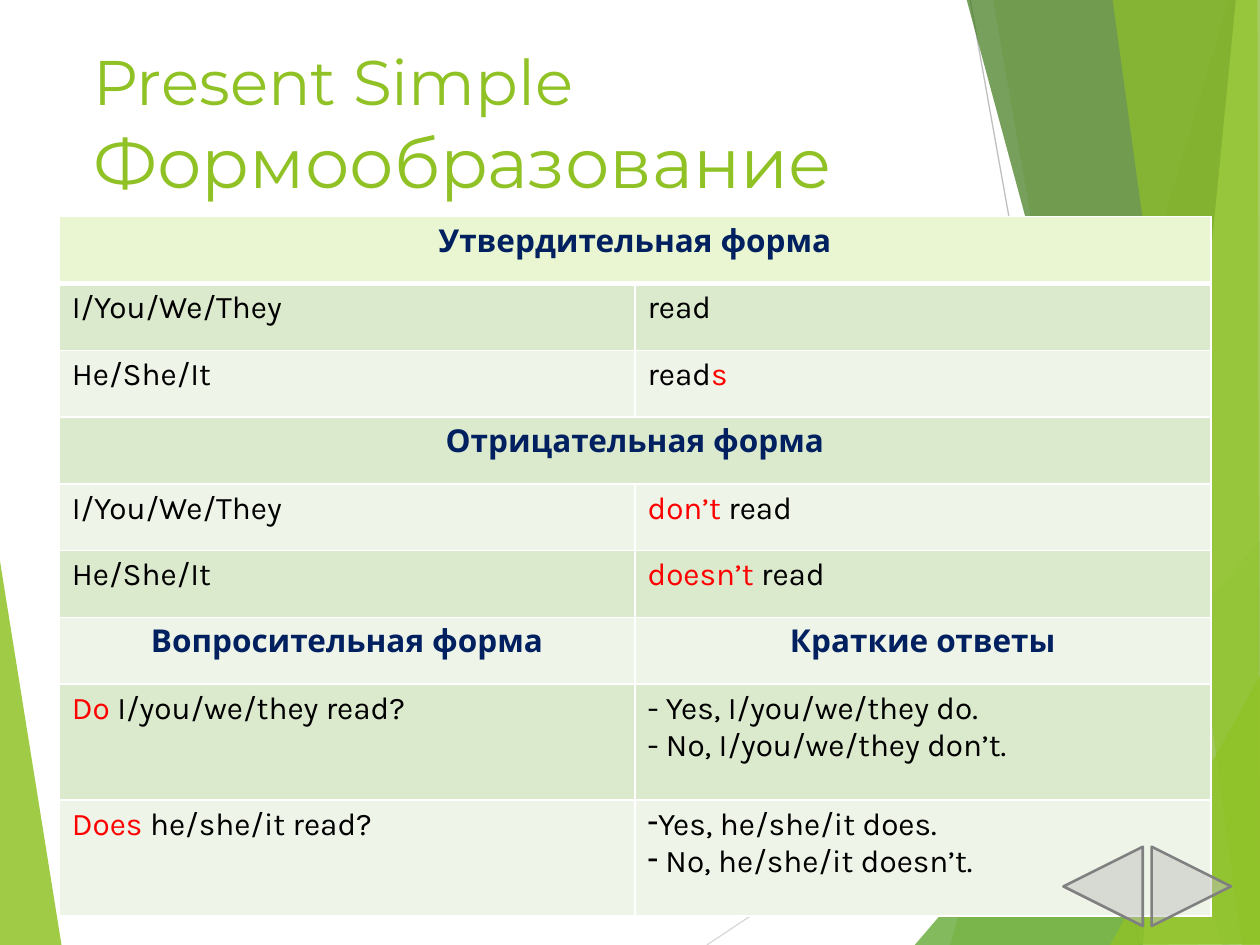
from dataclasses import dataclass
from typing import NamedTuple

from lxml.etree import SubElement
from pptx import Presentation
from pptx.dml.color import RGBColor
from pptx.enum.shapes import MSO_CONNECTOR, MSO_SHAPE
from pptx.enum.text import MSO_ANCHOR, PP_ALIGN
from pptx.oxml.ns import qn
from pptx.util import Inches, Pt

GREEN, NAVY, RED, BLACK = "90C226", "002060", "FF0000", "000000"
MINT, PALE, LIME = "DBE9CD", "EEF4E8", "EAF6D1"


class Facet(NamedTuple):
    color: str
    opacity: int
    points: list[tuple[float, float]]


class Ray(NamedTuple):
    color: str
    start: tuple[float, float]
    end: tuple[float, float]


class Words(NamedTuple):
    text: str
    color: str = BLACK


@dataclass
class Cell:
    lines: list[list[Words]]
    heading: bool = False
    bullet: str = ""


@dataclass
class Row:
    fill: str
    cells: list[Cell]
    height: float = 0.53


class Arrow(NamedTuple):
    left: float
    rotation: int


def heading(text: str) -> Cell:
    return Cell([[Words(text, NAVY)]], heading=True)


def plain(*lines: str, bullet: str = "") -> Cell:
    return Cell([[Words(line)] for line in lines], bullet=bullet)


def marked(*words: Words) -> Cell:
    return Cell([list(words)])


LEFT_FACET = Facet(GREEN, 85, [(-0.01, 4.39), (0.49, 7.51), (-0.01, 7.5)])
RAYS = [
    Ray("D9D9D9", (5.61, 7.5), (10.01, 4.57)),
    Ray("BFBFBF", (7.7, 0), (9.04, 7.5)),
]
RIGHT_FACETS = [
    Facet(GREEN, 30, [(9.75, 0), (7.54, 7.5), (10.02, 7.51), (10.01, 0.01)]),
    Facet(GREEN, 20, [(7.88, -0.01), (9.19, 7.5), (10.01, 7.5), (10.01, -0.01)]),
    Facet("54A021", 72, [(7.26, 7.5), (10, 4.29), (10.01, 7.5)]),
    Facet("3F7819", 70, [(7.67, -0.01), (9.7, 7.5), (10.01, 7.49), (10.01, -0.01)]),
    Facet("C0E474", 70, [(9.81, -0.01), (9.07, 7.5), (10.01, 7.5), (10, -0.01)]),
    Facet(GREEN, 65, [(8.83, -0.01), (9.86, 7.5), (10, 7.5), (9.98, -0.01)]),
    Facet(GREEN, 80, [(8.81, 7.5), (10.01, 5.35), (10.01, 7.49)]),
]
ROWS = [
    Row(LIME, [heading("Утвердительная форма")]),
    Row(MINT, [plain("I/You/We/They"), plain("read")]),
    Row(PALE, [plain("He/She/It"), marked(Words("read"), Words("s", RED))]),
    Row(MINT, [heading("Отрицательная форма")]),
    Row(PALE, [plain("I/You/We/They"), marked(Words("don’t", RED), Words(" read"))]),
    Row(MINT, [plain("He/She/It"), marked(Words("doesn’t", RED), Words(" read"))]),
    Row(PALE, [heading("Вопросительная форма"), heading("Краткие ответы")]),
    Row(MINT, [marked(Words("Do", RED), Words(" I/you/we/they read?")),
               plain("- Yes, I/you/we/they do.", "- No, I/you/we/they don’t.")], 0.92),
    Row(PALE, [marked(Words("Does", RED), Words(" he/she/it read?")),
               plain("Yes, he/she/it does.", " No, he/she/it doesn’t.", bullet="-")], 0.92),
]
ARROWS = [Arrow(9.14, 90), Arrow(8.44, 270)]


def rgb(color: str) -> RGBColor:
    return RGBColor.from_string(color)


def fill_translucent(shape, color: str, opacity: int) -> None:
    shape.shadow.inherit = False
    shape.fill.solid()
    shape.fill.fore_color.rgb = rgb(color)
    color_element = shape._element.spPr.find(qn("a:solidFill"))[0]
    SubElement(color_element, qn("a:alpha"), val=str(opacity * 1000))


def draw_facet(slide, facet: Facet) -> None:
    points = [(Inches(x), Inches(y)) for x, y in facet.points]
    builder = slide.shapes.build_freeform(*points[0])
    builder.add_line_segments(points[1:], close=True)
    shape = builder.convert_to_shape()
    fill_translucent(shape, facet.color, facet.opacity)
    shape.line.fill.background()


def draw_ray(slide, ray: Ray) -> None:
    ends = [Inches(value) for value in (*ray.start, *ray.end)]
    connector = slide.shapes.add_connector(MSO_CONNECTOR.STRAIGHT, *ends)
    connector.line.color.rgb = rgb(ray.color)
    connector.line.width = Pt(0.75)
    SubElement(connector._element.spPr, qn("a:effectLst"))


def write_title(slide) -> None:
    title = slide.shapes.title
    slide.shapes._spTree.append(title._element)  # in front of the facets
    title.left, title.top = Inches(0.64), Inches(0.29)
    title.width, title.height = Inches(8.11), Inches(1.44)
    title.text_frame.vertical_anchor = MSO_ANCHOR.TOP
    paragraph = title.text_frame.paragraphs[0]
    paragraph.alignment = PP_ALIGN.LEFT
    paragraph.font.name = "Montserrat"
    paragraph.font.color.rgb = rgb(GREEN)
    first = paragraph.add_run()
    first.text, first.font.size = "Present Simple", Pt(36)
    paragraph.add_line_break()
    second = paragraph.add_run()
    second.text, second.font.size = "Формообразование", Pt(40)


def set_borders(cell, top: float, bottom: float) -> None:
    properties = cell._tc.get_or_add_tcPr()
    for side, width in (("L", 1), ("R", 1), ("T", top), ("B", bottom)):
        line = SubElement(properties, qn(f"a:ln{side}"), w=str(Pt(width)))
        SubElement(SubElement(line, qn("a:solidFill")), qn("a:srgbClr"), val="FFFFFF")


def write_cell(table_cell, cell: Cell) -> None:
    frame = table_cell.text_frame
    for index, line in enumerate(cell.lines):
        paragraph = frame.add_paragraph() if index else frame.paragraphs[0]
        paragraph.alignment = PP_ALIGN.CENTER if cell.heading else PP_ALIGN.LEFT
        paragraph.font.name = "Karla"
        paragraph.font.size = Pt(18)
        paragraph.font.bold = cell.heading
        if cell.bullet:
            properties = paragraph._p.get_or_add_pPr()
            bullet = properties.makeelement(qn("a:buChar"), {"char": cell.bullet})
            properties.insert(0, bullet)
        for words in line:
            run = paragraph.add_run()
            run.text = words.text
            run.font.color.rgb = rgb(words.color)


def draw_table(slide) -> None:
    height = sum(row.height for row in ROWS)
    table = slide.shapes.add_table(len(ROWS), 2, Inches(0.47), Inches(1.72),
                                   Inches(9.14), Inches(height)).table
    table.first_row = table.horz_banding = False
    for index, row in enumerate(ROWS):
        table.rows[index].height = Inches(row.height)
        for column in range(2):
            table_cell = table.cell(index, column)
            set_borders(table_cell, 3 if index == 1 else 1, 3 if index == 0 else 1)
            table_cell.fill.solid()
            table_cell.fill.fore_color.rgb = rgb(row.fill)
        if len(row.cells) == 1:
            table.cell(index, 0).merge(table.cell(index, 1))
        for column, cell in enumerate(row.cells):
            write_cell(table.cell(index, column), cell)


def draw_arrow(slide, arrow: Arrow) -> None:
    shape = slide.shapes.add_shape(MSO_SHAPE.ISOSCELES_TRIANGLE, Inches(arrow.left),
                                   Inches(6.72), Inches(0.63), Inches(0.63))
    shape.rotation = arrow.rotation
    fill_translucent(shape, "BFBFBF", 49)
    shape.line.color.rgb = rgb("808080")
    shape.line.width = Pt(1.5)


def main() -> None:
    presentation = Presentation()
    presentation.slide_width, presentation.slide_height = Inches(10), Inches(7.5)
    slide = presentation.slides.add_slide(presentation.slide_layouts[5])
    draw_facet(slide, LEFT_FACET)
    for ray in RAYS:
        draw_ray(slide, ray)
    for facet in RIGHT_FACETS:
        draw_facet(slide, facet)
    write_title(slide)
    draw_table(slide)
    for arrow in ARROWS:
        draw_arrow(slide, arrow)
    presentation.save("out.pptx")


if __name__ == "__main__":
    main()
